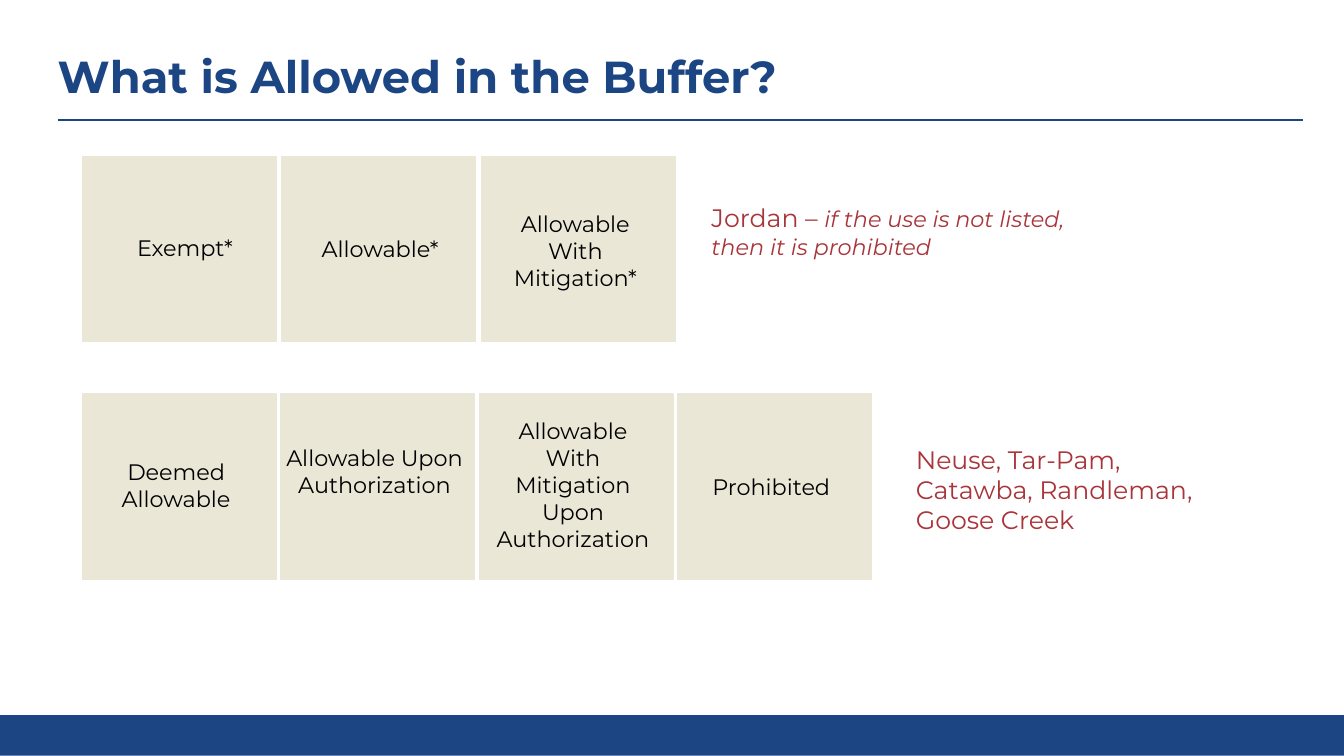
from pptx import Presentation
from pptx.dml.color import RGBColor
from pptx.enum import shapes, text
from pptx.oxml.ns import qn
from pptx.util import Cm, Pt
from lxml import etree

FONT = "Montserrat"
NAVY, SAND, RED, BLACK = "1C4584", "EBE7D7", "A9343A", "000000"

TITLE = "What is Allowed in the Buffer?"
# Each category: label, top and height of its text in cm
ROWS = [
    {"tile_top": 3.94, "tile_pitch": 5.03, "label_left": 2.17, "label_pitch": 4.92,
     "categories": [("Exempt*", 5.77, 1.63),
                    ("Allowable*", 5.79, 1.63),
                    ("Allowable\nWith\nMitigation*", 5.18, 3)]},
    {"tile_top": 9.93, "tile_pitch": 5, "label_left": 1.95, "label_pitch": 5,
     "categories": [("Deemed Allowable", 11.43, 2.39),
                    ("Allowable Upon Authorization", 11.07, 3.07),
                    ("Allowable\nWith\nMitigation Upon Authorization", 10.39, 4.45),
                    ("Prohibited", 11.81, 1.63)]},
]
# Each note: box in cm, then runs of text, size, italic
NOTES = [
    ((22.83, 11.07, 8.2, 2.57),
     [("Neuse, Tar-Pam, Catawba, Randleman, Goose Creek", 18, False)]),
    ((17.68, 4.98, 9.86, 1.7),
     [("Jordan – ", 18, False),
      ("if the use is not listed, then it is prohibited", 16, True)]),
]
TILE_LEFT, TILE_WIDTH, TILE_HEIGHT = 2.08, 4.88, 4.67
LABEL_WIDTH = 4.98


def rgb(value):
    return RGBColor.from_string(value)


def style(span, size, color, bold=False, italic=False):
    font = span.font
    font.name, font.size, font.bold, font.italic = FONT, Pt(size), bold, italic
    font.color.rgb = rgb(color)


def add_block(slide, left, top, width, height, color):
    block = slide.shapes.add_shape(shapes.MSO_SHAPE.RECTANGLE,
                                   Cm(left), Cm(top), Cm(width), Cm(height))
    block.shadow.inherit = False
    block.fill.solid()
    block.fill.fore_color.rgb = rgb(color)
    block.line.fill.background()
    return block


def add_text_frame(slide, left, top, width, height):
    box = slide.shapes.add_textbox(Cm(left), Cm(top), Cm(width), Cm(height))
    box.text_frame.word_wrap = True
    return box.text_frame


def add_title(slide):
    title = slide.shapes.title
    title.left, title.top, title.width, title.height = Cm(1.2), Cm(1.22), Cm(31.04), Cm(1.55)
    frame = title.text_frame
    frame.text = TITLE
    frame.vertical_anchor = text.MSO_ANCHOR.MIDDLE
    para = frame.paragraphs[0]
    para.alignment = text.PP_ALIGN.LEFT
    para.line_spacing = 0.9
    style(para.runs[0], 32, NAVY, bold=True)

    rule = slide.shapes.add_connector(shapes.MSO_CONNECTOR.STRAIGHT,
                                      Cm(1.45), Cm(3.02), Cm(32.84), Cm(3.02))
    rule.line.color.rgb = rgb(NAVY)
    rule.line.width = Pt(1.5)
    etree.SubElement(rule._element.spPr, qn("a:effectLst"))


def add_row(slide, row):
    for column in range(len(row["categories"])):
        tile = add_block(slide, TILE_LEFT + column * row["tile_pitch"], row["tile_top"],
                         TILE_WIDTH, TILE_HEIGHT, SAND)
        tile.line.color.rgb = rgb(SAND)
        tile.line.width = Pt(1)
    for column, (label, top, height) in enumerate(row["categories"]):
        frame = add_text_frame(slide, row["label_left"] + column * row["label_pitch"],
                               top, LABEL_WIDTH, height)
        frame.text = label
        for para in frame.paragraphs:
            para.alignment = text.PP_ALIGN.CENTER
            style(para.runs[0], 16, BLACK)


def add_note(slide, place, runs):
    para = add_text_frame(slide, *place).paragraphs[0]
    for words, size, italic in runs:
        span = para.add_run()
        span.text = words
        style(span, size, RED, italic=italic)


def main():
    deck = Presentation()
    deck.slide_width, deck.slide_height = Cm(33.87), Cm(19.05)
    slide = deck.slides.add_slide(deck.slide_layouts.get_by_name("Title Only"))
    add_title(slide)
    add_block(slide, 0, 18.02, 33.87, 1.02, NAVY)
    for row in ROWS:
        add_row(slide, row)
    for place, runs in NOTES:
        add_note(slide, place, runs)
    deck.save("out.pptx")


if __name__ == "__main__":
    main()
